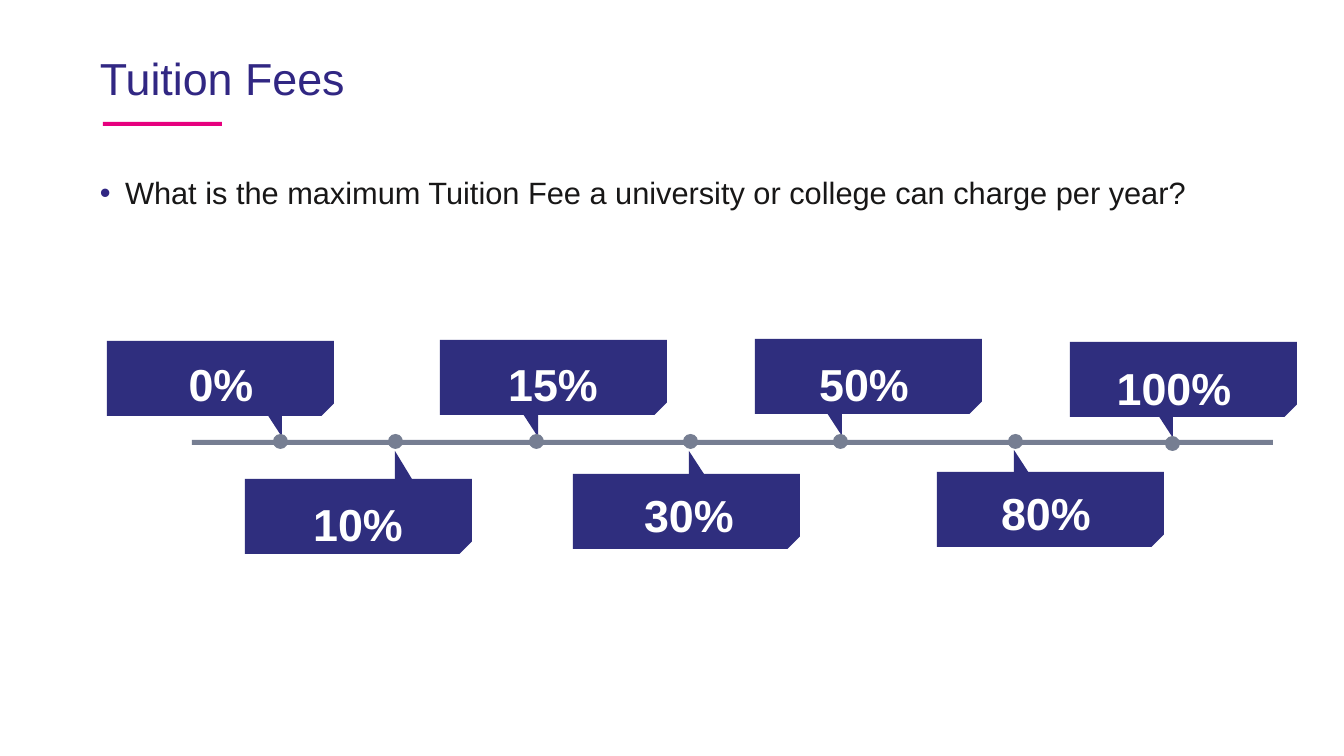
"""Build the Tuition Fees slide with a percentage timeline."""
from lxml.etree import SubElement
from pptx import Presentation
from pptx.dml.color import RGBColor
from pptx.enum.shapes import MSO_SHAPE
from pptx.enum.text import MSO_ANCHOR, PP_ALIGN
from pptx.oxml.ns import qn
from pptx.util import Emu, Pt

PX = 914400 / 100.8
COLORS = {"title": "312783", "accent": "E6007E", "body": "181717",
          "flag": "2F2E7E", "line": "767E92", "label": "FFFFFF"}

presentation = Presentation()
presentation.slide_width = Emu(round(1344 * PX))
presentation.slide_height = Emu(round(756 * PX))
slide = presentation.slides.add_slide(presentation.slide_layouts[6])


def add_block(kind, left, top, width, height, color):
    shape = slide.shapes.add_shape(kind, *(Emu(round(n * PX)) for n in (left, top, width, height)))
    shape.shadow.inherit = False
    shape.fill.solid()
    shape.fill.fore_color.rgb = RGBColor.from_string(COLORS[color])
    shape.line.fill.background()
    return shape


def add_text(text, left, top, width, height, size, color):
    box = slide.shapes.add_textbox(*(Emu(round(n * PX)) for n in (left, top, width, height)))
    box.text_frame.word_wrap = True
    paragraph = box.text_frame.paragraphs[0]
    paragraph.text = text
    if color == "body":
        properties = paragraph._p.get_or_add_pPr()
        properties.set("marL", "228600")
        properties.set("indent", "-228600")
        bullet_color = SubElement(properties, qn("a:buClr"))
        SubElement(bullet_color, qn("a:srgbClr")).set("val", COLORS["title"])
        SubElement(properties, qn("a:buFont")).set("typeface", "Arial")
        SubElement(properties, qn("a:buChar")).set("char", "•")
    paragraph.font.name = "Arial"
    paragraph.font.size = Pt(size)
    paragraph.font.color.rgb = RGBColor.from_string(COLORS[color])
    return box.text_frame


add_block(MSO_SHAPE.RECTANGLE, 103, 122, 119, 4, "accent")
title = add_text("Tuition Fees", 90, 38, 1165, 72, 32, "title")
title.vertical_anchor = MSO_ANCHOR.BOTTOM
title.paragraphs[0].line_spacing = 0.9
add_text("What is the maximum Tuition Fee a university or college can charge per year?",
         90, 169, 1207, 72, 22, "body")

add_block(MSO_SHAPE.RECTANGLE, 192, 440, 1081, 5, "line")

# text, flag (left, top), label (left, top, width), pointer (left, top, width, height), dot (left, top)
MARKS = [
    ("0%", (107, 341), (160, 342, 122), (267, 414, 15, 23), (273, 434)),
    ("10%", (245, 479), (299, 482, 118), (395, 451, 17, 28), (388, 434)),
    ("15%", (440, 340), (490, 342, 126), (523, 414, 15, 23), (529, 434)),
    ("30%", (573, 474), (634, 473, 110), (689, 451, 15, 23), (683, 434)),
    ("50%", (755, 339), (794, 342, 140), (827, 413, 15, 23), (833, 434)),
    ("80%", (937, 472), (976, 471, 140), (1014, 450, 15, 23), (1008, 434)),
    ("100%", (1070, 342), (1105, 346, 138), (1158, 415, 15, 23), (1165, 436)),
]

for index, (text, flag_place, label_place, pointer_place, dot_place) in enumerate(MARKS):
    flag = add_block(MSO_SHAPE.SNIP_1_RECTANGLE, *flag_place, 227, 75, "flag")
    flag._element.spPr.xfrm.set("flipV", "1")
    pointer = add_block(MSO_SHAPE.RIGHT_TRIANGLE, *pointer_place, "flag")
    if index % 2 == 0:
        pointer.rotation = 180
    add_block(MSO_SHAPE.OVAL, *dot_place, 15, 15, "line")
    label = add_text(text, *label_place, 52, 32, "label")
    label.margin_left = label.margin_right = Emu(round(7 * PX))
    label.margin_top = label.margin_bottom = Emu(round(4 * PX))
    label.paragraphs[0].alignment = PP_ALIGN.CENTER
    label.paragraphs[0].line_spacing = 1.2
    label.paragraphs[0].font.bold = True

presentation.save("out.pptx")
